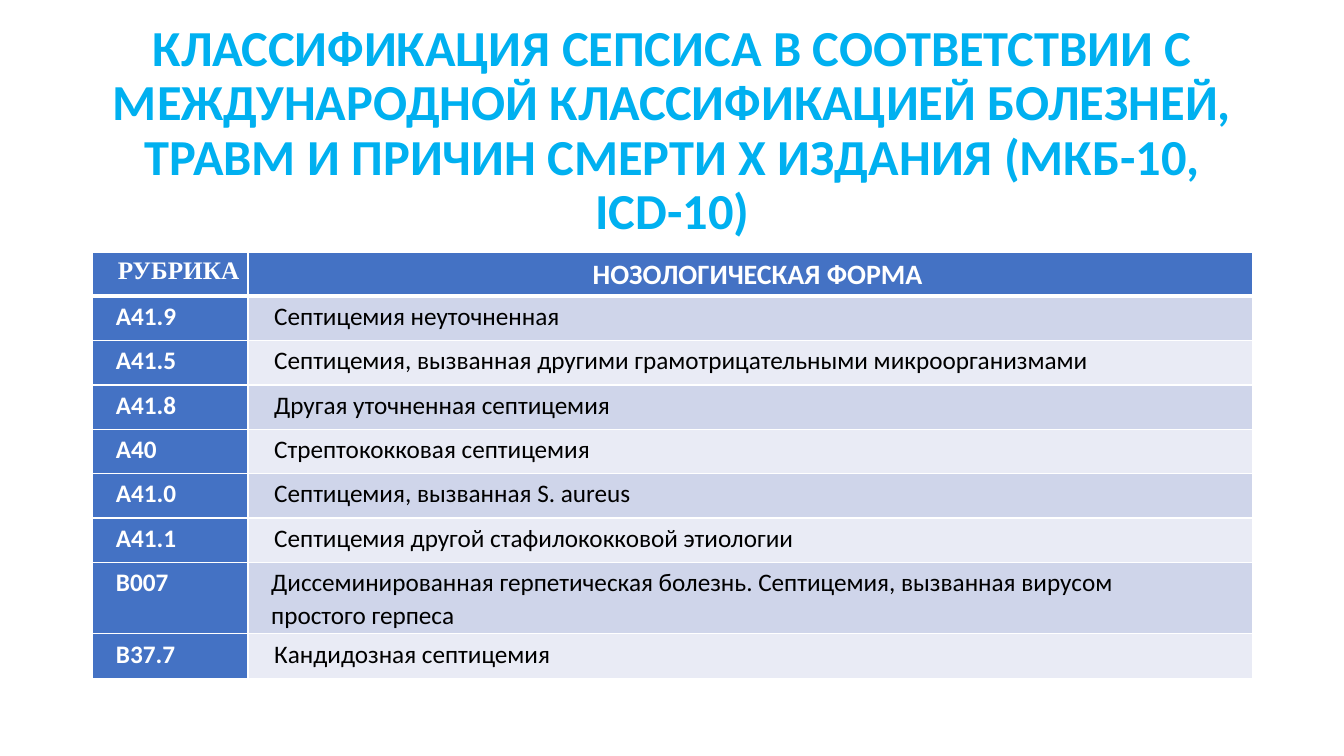
from lxml.etree import SubElement
from pptx import Presentation
from pptx.dml.color import RGBColor
from pptx.enum.text import MSO_ANCHOR, PP_ALIGN
from pptx.oxml.ns import qn
from pptx.util import Inches, Pt

TITLE = ("КЛАССИФИКАЦИЯ СЕПСИСА В СООТВЕТСТВИИ С МЕЖДУНАРОДНОЙ КЛАССИФИКАЦИЕЙ "
         "БОЛЕЗНЕЙ, ТРАВМ И ПРИЧИН СМЕРТИ X ИЗДАНИЯ (МКБ-10, ICD-10)")
HEADER = ("РУБРИКА", "НОЗОЛОГИЧЕСКАЯ ФОРМА")
DISEASES = [
    ("А41.9", "Септицемия неуточненная"),
    ("А41.5", "Септицемия, вызванная другими грамотрицательными микроорганизмами"),
    ("А41.8", "Другая уточненная септицемия"),
    ("А40", "Стрептококковая септицемия"),
    ("А41.0", "Септицемия, вызванная S. aureus"),
    ("А41.1", "Септицемия другой стафилококковой этиологии"),
    ("В007", "Диссеминированная герпетическая болезнь. Септицемия, вызванная вирусом\n"
             "простого герпеса"),
    ("В37.7", "Кандидозная септицемия"),
]
COLORS = {"title": "00B0F0", "head": "4472C4", "odd": "CFD5EA", "even": "E9EBF5",
          "white": "FFFFFF", "black": "000000"}
COL_WIDTHS = (1.54, 9.96)
ROW_HEIGHT, TALL_ROW_HEIGHT = 0.44, 0.71


def write(tf, text, size=18, color="white", bold=True, font="Calibri",
          align=PP_ALIGN.LEFT, spacing=1.07, margin=0, indent=0):
    """Fill a text frame, one paragraph for each line of text."""
    for i, line in enumerate(text.split("\n")):
        p = tf.add_paragraph() if i else tf.paragraphs[0]
        p.alignment, p.line_spacing = align, spacing
        pPr = p._p.get_or_add_pPr()
        pPr.set("marL", str(Inches(margin)))
        pPr.set("indent", str(Inches(indent)))
        r = p.add_run()
        r.text = line
        r.font.name, r.font.size, r.font.bold = font, Pt(size), bold
        r.font.color.rgb = RGBColor.from_string(COLORS[color])


def style_cell(cell, fill, bottom=1, top=1):
    """Set margins, white borders (widths in points) and fill."""
    cell.margin_left, cell.margin_top = Inches(0.04), Inches(0.03)
    cell.margin_right, cell.margin_bottom = Inches(0.08), 0
    tcPr = cell._tc.get_or_add_tcPr()
    for side, width in (("L", 1), ("R", 1), ("T", top), ("B", bottom)):
        ln = SubElement(tcPr, qn(f"a:ln{side}"), w=str(Pt(width)))
        SubElement(SubElement(ln, qn("a:solidFill")), qn("a:srgbClr"), val=COLORS["white"])
    cell.fill.solid()
    cell.fill.fore_color.rgb = RGBColor.from_string(COLORS[fill])


def add_title(s):
    tf = s.shapes.add_textbox(Inches(0.7), Inches(0.43), Inches(11.94), Inches(1.75)).text_frame
    tf.word_wrap = True
    tf.vertical_anchor = MSO_ANCHOR.MIDDLE
    write(tf, TITLE, size=36, color="title", align=PP_ALIGN.CENTER, spacing=0.9)


def add_disease_table(s):
    heights = [ROW_HEIGHT] + [TALL_ROW_HEIGHT if "\n" in name else ROW_HEIGHT
                              for _, name in DISEASES]
    table = s.shapes.add_table(len(heights), len(COL_WIDTHS), Inches(0.92), Inches(2.5),
                               Inches(sum(COL_WIDTHS)), Inches(sum(heights))).table
    for col, width in zip(table.columns, COL_WIDTHS):
        col.width = Inches(width)
    for row, height in zip(table.rows, heights):
        row.height = Inches(height)

    for c in range(len(HEADER)):
        style_cell(table.cell(0, c), "head", bottom=3)
    write(table.cell(0, 0).text_frame, HEADER[0], font="Times New Roman",
          margin=0.02, indent=0.19)
    write(table.cell(0, 1).text_frame, HEADER[1], size=20, align=PP_ALIGN.CENTER, indent=0.19)

    for i, (code, name) in enumerate(DISEASES, start=1):
        top = 3 if i == 1 else 1
        code_cell, name_cell = table.cell(i, 0), table.cell(i, 1)
        style_cell(code_cell, "head", top=top)
        style_cell(name_cell, "odd" if i % 2 else "even", top=top)
        write(code_cell.text_frame, code, indent=0.19)
        margin, indent = (0.02, 0.17) if "\n" in name else (0.03, 0.19)
        write(name_cell.text_frame, name, color="black", bold=False,
              margin=margin, indent=indent)


def main():
    prs = Presentation()
    prs.slide_width, prs.slide_height = Inches(13.33), Inches(7.5)
    s = prs.slides.add_slide(prs.slide_layouts[6])
    add_title(s)
    add_disease_table(s)
    prs.save("out.pptx")


if __name__ == "__main__":
    main()
